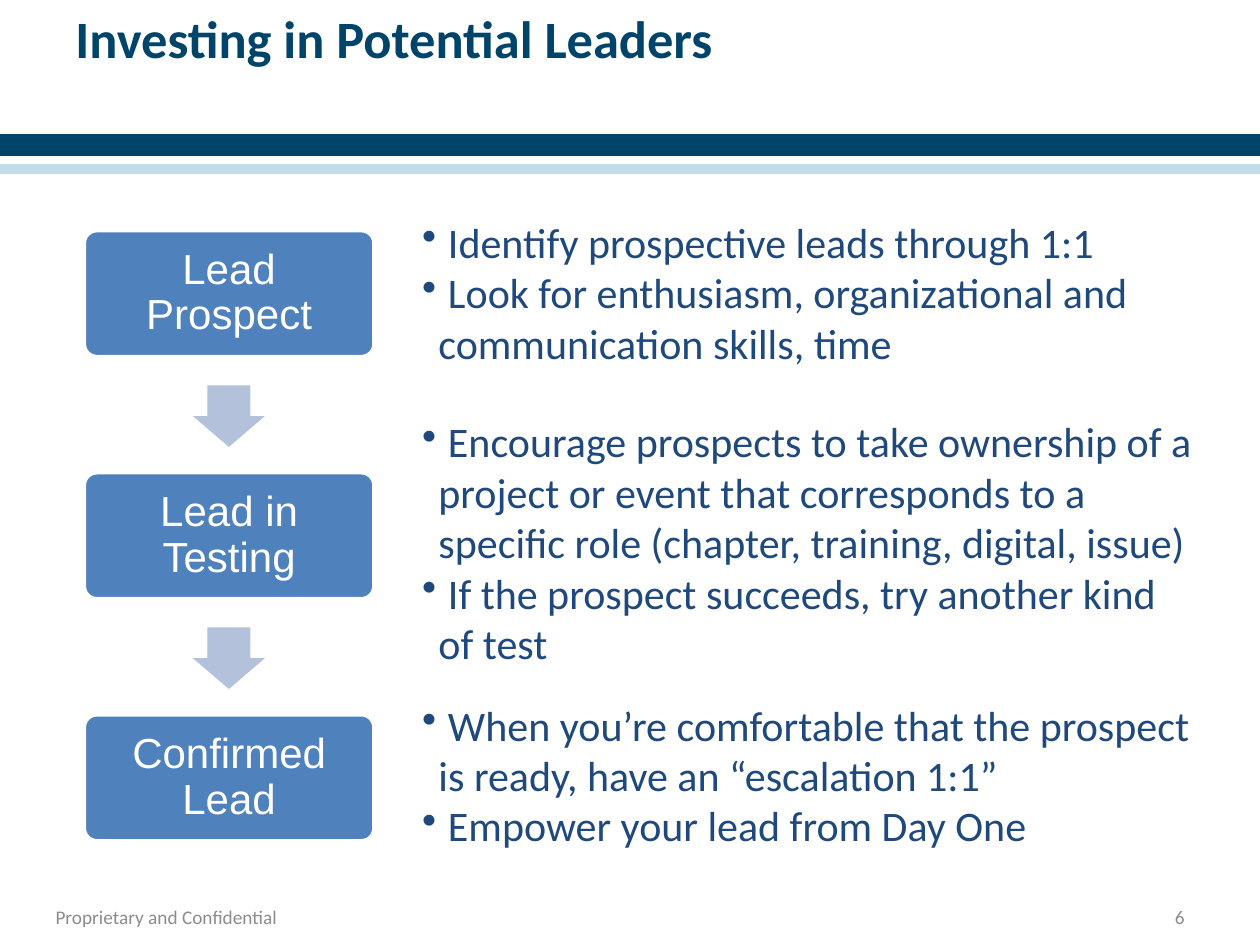
from dataclasses import dataclass

import pptx
import pptx.dml.color
import pptx.enum.shapes
import pptx.enum.text
import pptx.oxml
import pptx.oxml.ns
import pptx.util

Cm = pptx.util.Cm
Pt = pptx.util.Pt
Align = pptx.enum.text.PP_ALIGN
Anchor = pptx.enum.text.MSO_ANCHOR
Preset = pptx.enum.shapes.MSO_SHAPE

NAVY = "00446A"
WHITE = "FFFFFF"
PALE_BLUE = "C2DBE8"
STAGE_BLUE = "4F81BD"
ARROW_BLUE = "B3C1DB"
BODY_BLUE = "1F497D"
GREY = "8C8C8C"

SLIDE_WIDTH = 25.4
STAGE_TOP, STAGE_PITCH = 4.65, 4.88


@dataclass(frozen=True)
class Box:
    left: float
    top: float
    width: float
    height: float

    def lengths(self) -> tuple:
        return Cm(self.left), Cm(self.top), Cm(self.width), Cm(self.height)


@dataclass(frozen=True)
class TextStyle:
    size: float
    color: str
    font: str = "Calibri"
    bold: bool = False
    align: Align = Align.LEFT


@dataclass(frozen=True)
class Band:
    top: float
    height: float
    color: str


@dataclass(frozen=True)
class Stage:
    name: str
    advice_top: float
    advice: tuple[str, ...]


BANDS = (Band(2.74, 0.64, NAVY), Band(3.18, 0.13, WHITE), Band(3.35, 0.13, PALE_BLUE))

STAGES = (
    Stage("Lead Prospect", 4.24, (
        "Identify prospective leads through 1:1",
        "Look for enthusiasm, organizational and communication skills, time",
    )),
    Stage("Lead in Testing", 8.26, (
        "Encourage prospects to take ownership of a project or event that "
        "corresponds to a specific role (chapter, training, digital, issue)",
        "If the prospect succeeds, try another kind of test",
    )),
    Stage("Confirmed Lead", 13.97, (
        "When you’re comfortable that the prospect is ready, have an “escalation 1:1”",
        "Empower your lead from Day One",
    )),
)

TITLE = TextStyle(30, NAVY, bold=True)
STAGE_NAME = TextStyle(24, WHITE, font="Arial", align=Align.CENTER)
ADVICE = TextStyle(24, BODY_BLUE)
FOOTER = TextStyle(11, GREY)
PAGE_NUMBER = TextStyle(11, GREY, align=Align.RIGHT)


def rgb(color: str) -> pptx.dml.color.RGBColor:
    return pptx.dml.color.RGBColor.from_string(color)


def style_paragraph(paragraph, style: TextStyle) -> None:
    paragraph.alignment = style.align
    paragraph.font.size = Pt(style.size)
    paragraph.font.name = style.font
    paragraph.font.bold = style.bold
    paragraph.font.color.rgb = rgb(style.color)


def set_margins(frame, side: float, end: float) -> None:
    frame.margin_left = frame.margin_right = Cm(side)
    frame.margin_top = frame.margin_bottom = Cm(end)


def add_shape(slide, preset: Preset, box: Box, fill: str, line: str | None = None):
    shape = slide.shapes.add_shape(preset, *box.lengths())
    shape.shadow.inherit = False
    shape.fill.solid()
    shape.fill.fore_color.rgb = rgb(fill)
    if line:
        shape.line.color.rgb = rgb(line)
        shape.line.width = Pt(2)
    else:
        shape.line.fill.background()
    return shape


def add_text(slide, box: Box, text: str, style: TextStyle, anchor: Anchor = Anchor.TOP):
    frame = slide.shapes.add_textbox(*box.lengths()).text_frame
    frame.word_wrap = True
    frame.vertical_anchor = anchor
    frame.text = text
    for paragraph in frame.paragraphs:
        style_paragraph(paragraph, style)
    return frame


def add_advice(slide, box: Box, advice: tuple[str, ...]) -> None:
    frame = slide.shapes.add_textbox(*box.lengths()).text_frame
    frame.word_wrap = True
    frame.text = "\n".join(f" {point}" for point in advice)
    for paragraph in frame.paragraphs:
        properties = paragraph._p.get_or_add_pPr()
        properties.set("marL", str(Cm(0.33)))
        properties.set("indent", str(-Cm(0.33)))
        bullet = pptx.oxml.parse_xml(
            f'<a:buChar {pptx.oxml.ns.nsdecls("a")} char="•"/>'
        )
        properties.append(bullet)
        style_paragraph(paragraph, ADVICE)


def add_stage(slide, stage: Stage, top: float) -> None:
    card = add_shape(
        slide, Preset.ROUNDED_RECTANGLE, Box(1.7, top, 5.84, 2.54), STAGE_BLUE, WHITE
    )
    card.adjustments[0] = 0.1
    frame = card.text_frame
    frame.word_wrap = True
    frame.vertical_anchor = Anchor.MIDDLE
    set_margins(frame, 0.33, 0.33)
    frame.text = stage.name
    style_paragraph(frame.paragraphs[0], STAGE_NAME)
    frame.paragraphs[0].line_spacing = 0.9
    add_advice(slide, Box(8.26, stage.advice_top, 16.08, 3.18), stage.advice)


def add_arrow(slide, top: float) -> None:
    arrow = add_shape(slide, Preset.DOWN_ARROW, Box(3.89, top, 1.45, 1.24), ARROW_BLUE)
    arrow.adjustments[0] = 0.6
    arrow.adjustments[1] = 0.5


def main() -> None:
    deck = pptx.Presentation()
    deck.slide_width, deck.slide_height = Cm(SLIDE_WIDTH), Cm(19.05)
    slide = deck.slides.add_slide(deck.slide_layouts[6])

    for band in BANDS:
        box = Box(0, band.top, SLIDE_WIDTH, band.height)
        add_shape(slide, Preset.RECTANGLE, box, band.color, band.color)

    add_text(slide, Box(1.27, 0, 22.86, 3.18), "Investing in Potential Leaders", TITLE)

    for index, stage in enumerate(STAGES):
        top = STAGE_TOP + index * STAGE_PITCH
        add_stage(slide, stage, top)
        if index < len(STAGES) - 1:
            add_arrow(slide, top + 3.12)

    footer = add_text(
        slide, Box(0.84, 18.03, 6.53, 0.89), "Proprietary and Confidential",
        FOOTER, Anchor.MIDDLE,
    )
    set_margins(footer, 0.28, 0.15)
    add_text(slide, Box(18.21, 18.03, 5.92, 0.89), "6", PAGE_NUMBER, Anchor.MIDDLE)

    deck.save("out.pptx")


if __name__ == "__main__":
    main()
